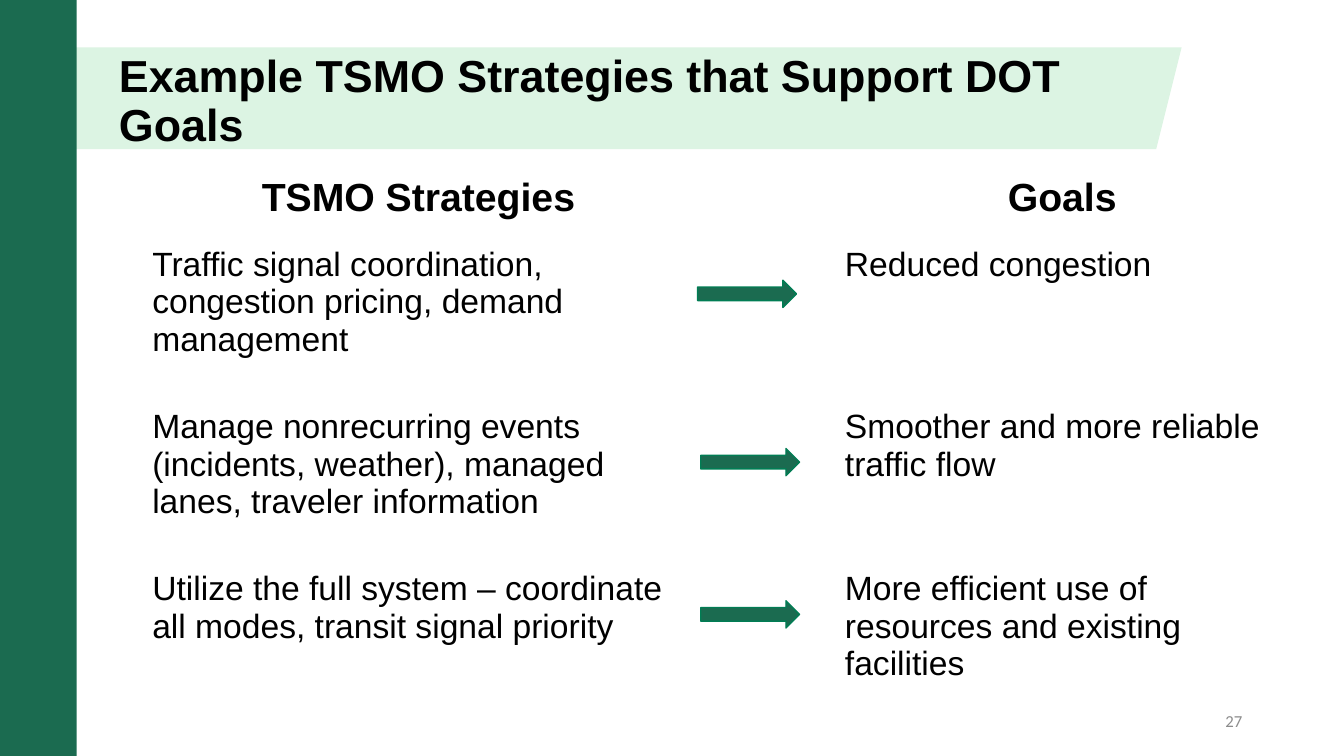
"""Build the slide that pairs TSMO strategies with DOT goals."""
from pptx import Presentation
from pptx.dml.color import RGBColor
from pptx.enum.shapes import MSO_SHAPE
from pptx.enum.text import MSO_ANCHOR, MSO_AUTO_SIZE, PP_ALIGN
from pptx.util import Inches, Pt

LEFT, CENTER, RIGHT = PP_ALIGN.LEFT, PP_ALIGN.CENTER, PP_ALIGN.RIGHT
TOP, MIDDLE = MSO_ANCHOR.TOP, MSO_ANCHOR.MIDDLE
NO_AUTOFIT = MSO_AUTO_SIZE.NONE
RECTANGLE = MSO_SHAPE.RECTANGLE
PARALLELOGRAM = MSO_SHAPE.PARALLELOGRAM
RIGHT_ARROW = MSO_SHAPE.RIGHT_ARROW
TITLE_ONLY = 5

COLORS = {
    "text": "000000",
    "mint": "DCF4E3",
    "green": "1B6B50",
    "outline": "017D54",
    "number": "8C8C8C",
}
COLUMN_WIDTHS = (41.11, 10.43, 33.83)
HEADER_HEIGHT, ROW_HEIGHT = 11.47, 21.47
ROWS = (
    ("TSMO Strategies", "", "Goals"),
    ("Traffic signal coordination, congestion pricing, demand management",
     "", "Reduced congestion"),
    ("Manage nonrecurring events (incidents, weather), managed lanes, traveler information",
     "", "Smoother and more reliable traffic flow"),
    ("Utilize the full system – coordinate all modes, transit signal priority",
     "", "More efficient use of resources and existing facilities"),
)
ARROWS = ((51.91, 37.07), (52.14, 59.33), (52.14, 79.47))


class SlideBuilder:
    """Hold the style and the current slide; lengths are percent of the slide's size."""

    def __init__(self, presentation):
        self.width = presentation.slide_width
        self.height = presentation.slide_height
        layout = presentation.slide_layouts[TITLE_ONLY]
        self.slide = presentation.slides.add_slide(layout)
        self.shapes = self.slide.shapes

    def across(self, share):
        return round(self.width * share / 100)

    def down(self, share):
        return round(self.height * share / 100)

    def box(self, left, top, width, height):
        return self.across(left), self.down(top), self.across(width), self.down(height)

    def color(self, name):
        return RGBColor.from_string(COLORS[name])

    def set_text(self, text_frame, text, size, bold=False, align=LEFT,
                 font="Arial", color="text"):
        paragraph = text_frame.paragraphs[0]
        paragraph.text = text
        paragraph.alignment = align
        paragraph.font.name = font
        paragraph.font.size = Pt(size)
        paragraph.font.bold = bold
        paragraph.font.color.rgb = self.color(color)
        return paragraph

    def shape(self, kind, place, fill, outline=None):
        shape = self.shapes.add_shape(kind, *self.box(*place))
        shape.shadow.inherit = False
        shape.fill.solid()
        shape.fill.fore_color.rgb = self.color(fill)
        if outline:
            shape.line.color.rgb = self.color(outline)
            shape.line.width = Pt(1)
        else:
            shape.line.fill.background()

    def title(self, text, place):
        title = self.shapes.title
        title.left, title.top, title.width, title.height = self.box(*place)
        title.element.getparent().append(title.element)
        title.text_frame.auto_size = NO_AUTOFIT
        title.text_frame.vertical_anchor = MIDDLE
        paragraph = self.set_text(title.text_frame, text, 32, bold=True)
        paragraph.line_spacing = 0.9

    def text(self, text, place, **style):
        frame = self.shapes.add_textbox(*self.box(*place)).text_frame
        frame.word_wrap = True
        frame.vertical_anchor = MIDDLE
        self.set_text(frame, text, **style)

    def table(self, rows, left, top):
        heights = [HEADER_HEIGHT] + [ROW_HEIGHT] * (len(rows) - 1)
        place = self.box(left, top, sum(COLUMN_WIDTHS), sum(heights))
        table = self.shapes.add_table(len(rows), len(COLUMN_WIDTHS), *place).table
        table.horz_banding = False
        for column, width in zip(table.columns, COLUMN_WIDTHS):
            column.width = self.across(width)
        for row_index, (row, height) in enumerate(zip(rows, heights)):
            table.rows[row_index].height = self.down(height)
            header = row_index == 0
            for column_index, text in enumerate(row):
                cell = table.cell(row_index, column_index)
                cell.fill.background()
                cell.vertical_anchor = MIDDLE if header else TOP
                self.set_text(cell.text_frame, text, 28 if header else 24,
                              bold=header, align=CENTER if header else LEFT)


def main():
    presentation = Presentation()
    presentation.slide_width = Inches(13.33)
    presentation.slide_height = Inches(7.5)
    builder = SlideBuilder(presentation)
    builder.shape(PARALLELOGRAM, (1.8, 6.27, 86.12, 13.47), "mint")
    builder.shape(RECTANGLE, (0, 0, 5.7, 100), "green")
    builder.title("Example TSMO Strategies that Support DOT Goals",
                  (8.1, 6.67, 73.82, 13.73))
    builder.table(ROWS, 10.58, 20.4)
    for left, top in ARROWS:
        builder.shape(RIGHT_ARROW, (left, top, 7.35, 3.6), "green", "outline")
    builder.text("27", (70.67, 92.67, 22.51, 5.33), size=12, align=RIGHT,
                 font="Calibri", color="number")
    presentation.save("out.pptx")


if __name__ == "__main__":
    main()
